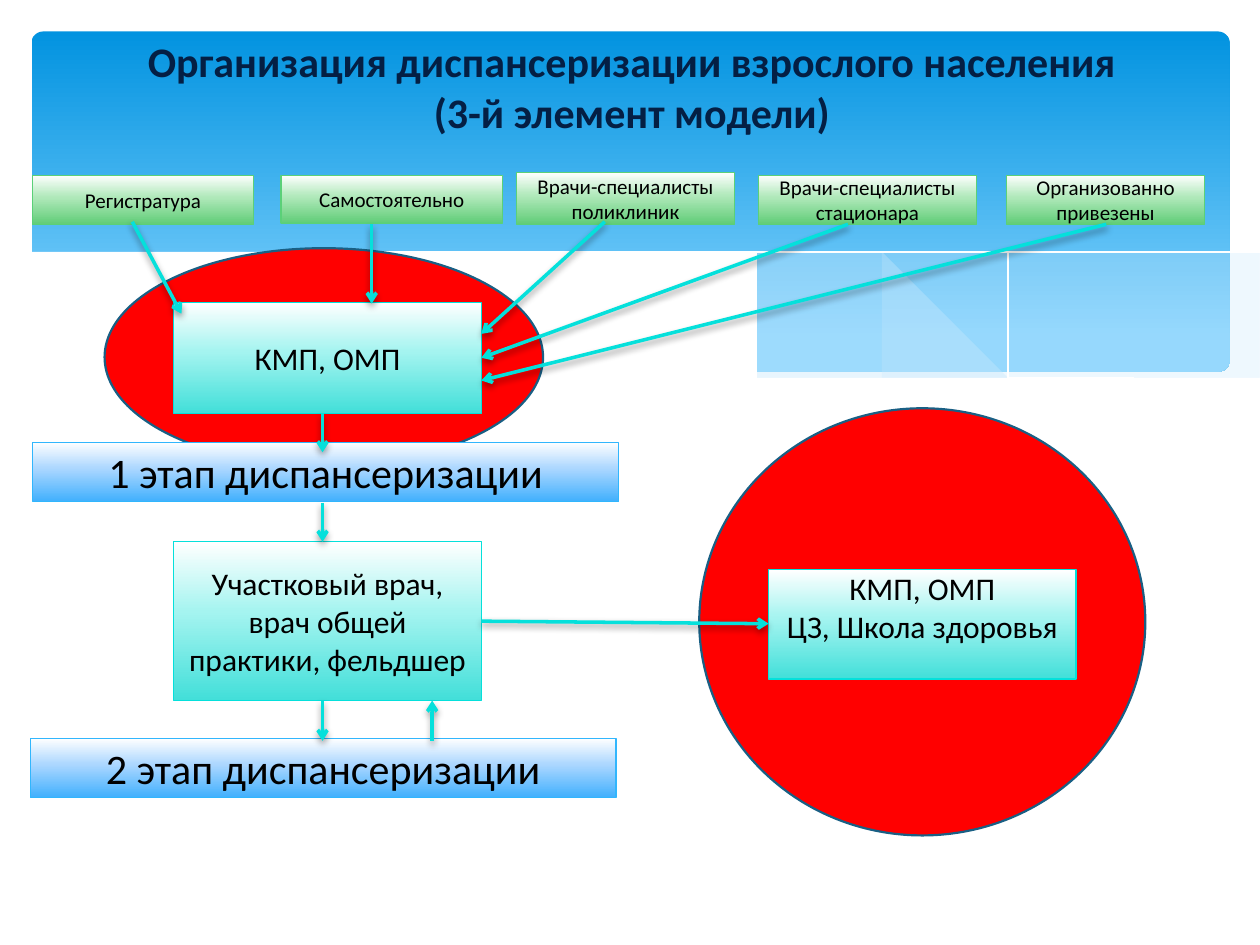
from collections import namedtuple

from lxml import etree
from pptx import Presentation
from pptx import util as u
from pptx.dml import color as dml
from pptx.enum import shapes, text
from pptx.oxml import ns

Box = namedtuple("Box", "left top width height")

COLORS = {
    "white": "FFFFFF", "black": "000000", "navy": "041F44", "red": "FF0000",
    "red_edge": "195F84", "sky_top": "0293E0", "sky_low": "83D3FE", "mist": "C6E7FC",
    "teal": "05E0DB", "teal_mid": "A5F4F0", "teal_low": "42DFD9",
    "green": "5BD078", "green_mid": "B1E9BB", "green_low": "61CD78",
    "blue": "31B6FD", "blue_mid": "ACD7FF", "blue_low": "42B0FD",
}
WAVES = [
    ([[(9.53, .16), (9.12, .23), (8.38, .39), (7.56, .58), (6.83, .73), (6.38, .81)],
      [(6.38, .81), (6.82, .87), (7.34, .92), (7.91, .94), (8.4, .91), (8.82, .85),
       (9.19, .75), (9.53, .63)]], "mist", 29),
    ([[(8.7, .89), (7.84, .76), (7.18, .63), (6.06, .38), (5.46, .24), (4.91, .14),
       (4.42, .07), (3.97, .03), (3.38, .01), (2.9, .04), (2.63, .07)],
      [(2.63, .07), (3.19, .15), (3.81, .27), (4.26, .38), (5.07, .56), (5.78, .71),
       (6.42, .82), (6.99, .9), (7.62, .94), (8.15, .94), (8.7, .89)]], "mist", 40),
    ([[(2.86, .11), (3.3, .05), (3.93, .03), (4.66, .06), (5.33, .13), (6.13, .24),
       (7.04, .42), (8.08, .67), (8.84, .88)]], None, None),
    ([[(5.9, .73), (6.72, .51), (7.53, .32), (8.43, .15), (9.01, .06), (9.52, .01)]],
     None, None),
    ([[(0, .29), (.23, .19), (.62, .09), (1.09, .02), (1.54, 0), (2.07, .01),
       (2.69, .06), (3.42, .18), (4.24, .36), (5.06, .55), (5.8, .7), (6.45, .81),
       (7.03, .88), (7.7, .92), (8.27, .91), (8.76, .85), (9.17, .75), (9.54, .62)],
      [(9.54, 1.45), (0, 1.45)]], "white", 100),
]
SOURCES = [
    (Box(1.97, .02, 1.76, .38), "Самостоятельно"),
    (Box(3.84, 0, 1.73, .41), "Врачи-специалисты поликлиник"),
    (Box(5.76, .02, 1.73, .39), "Врачи-специалисты стационара"),
    (Box(7.73, .02, 1.57, .39), "Организованно привезены"),
    (Box(0, .02, 1.75, .39), "Регистратура"),
]
ARROWS = [
    (8.78, 1.78, 3.82, 3.02), (6.73, 1.78, 3.82, 2.84), (4.8, 1.76, 3.82, 2.65),
    (2.95, 1.78, 2.95, 2.41), (1.05, 1.76, 1.44, 2.49), (2.56, 3.28, 2.56, 3.59),
    (2.56, 3.99, 2.56, 4.3), (2.56, 5.56, 2.56, 5.88), (3.43, 5.88, 3.43, 5.56),
    (3.82, 4.93, 6.1, 4.95),
]


def rgb(name):
    return dml.RGBColor.from_string(COLORS[name])


def add_xml(parent, tag, **values):
    return etree.SubElement(parent, ns.qn(tag), {key: str(v) for key, v in values.items()})


def inside(box, part):
    return Box(box.left + part.left, box.top + part.top, part.width, part.height)


def lengths(box):
    return [u.Inches(value) for value in box]


def set_gradient(shape, stops):
    shape.fill.gradient()
    shape.fill.gradient_angle = 270
    stop_list = next(shape._element.spPr.iter(ns.qn("a:gsLst")))
    for stop in list(stop_list):
        stop_list.remove(stop)
    for percent, name in stops:
        stop = add_xml(stop_list, "a:gs", pos=percent * 1000)
        add_xml(stop, "a:srgbClr", val=COLORS[name])


def write(frame, lines, size, color="black", bold=False, one_para=False):
    frame.word_wrap = True
    frame.vertical_anchor = text.MSO_ANCHOR.MIDDLE
    formats = {"name": "Calibri", "size": u.Pt(size), "bold": bold}
    para = frame.paragraphs[0]
    for index, line in enumerate(lines):
        if index and one_para:
            para.add_line_break()
        elif index:
            para = frame.add_paragraph()
        para.alignment = text.PP_ALIGN.CENTER
        span = para.add_run()
        span.text = line
        for key, value in formats.items():
            setattr(span.font, key, value)
        span.font.color.rgb = rgb(color)


def add_card(page, box, lines, size, tone):
    card = page.shapes.add_shape(shapes.MSO_SHAPE.RECTANGLE, *lengths(box))
    card.shadow.inherit = False
    set_gradient(card, [(0, "white"), (44, tone + "_mid"), (100, tone + "_low")])
    card.line.color.rgb = rgb(tone)
    card.line.width = u.Pt(0.75)
    write(card.text_frame, lines, size)
    return card


def add_disc(page, box):
    disc = page.shapes.add_shape(shapes.MSO_SHAPE.FLOWCHART_CONNECTOR, *lengths(box))
    disc.shadow.inherit = False
    disc.fill.solid()
    disc.fill.fore_color.rgb = rgb("red")
    disc.line.color.rgb = rgb("red_edge")
    disc.line.width = u.Pt(1.25)


def smooth(points, steps=5):
    if len(points) < 3:
        return points
    padded = [points[0], *points, points[-1]]
    curve = [points[0]]
    for a, b, c, d in zip(padded, padded[1:], padded[2:], padded[3:]):
        for step in range(1, steps + 1):
            t = step / steps
            curve.append(tuple(
                (2 * q + (r - p) * t + (2 * p - 5 * q + 4 * r - s) * t ** 2
                 + (3 * q - p - 3 * r + s) * t ** 3) / 2
                for p, q, r, s in zip(a, b, c, d)))
    return curve


def add_wave(page, box, sections, color, opacity):
    points = [(box.left + x, box.top + y) for part in sections for x, y in smooth(part)]
    builder = page.shapes.build_freeform(*points[0], scale=u.Inches(1))
    builder.add_line_segments(points[1:], close=color is not None)
    wave = builder.convert_to_shape()
    wave.shadow.inherit = False
    if color is None:
        wave.fill.background()
        wave.line.color.rgb = rgb("white")
        wave.line.width = u.Pt(0)
        return
    wave.line.fill.background()
    wave.fill.solid()
    wave.fill.fore_color.rgb = rgb(color)
    if opacity < 100:
        shade = next(wave._element.spPr.iter(ns.qn("a:srgbClr")))
        add_xml(shade, "a:alpha", val=opacity * 1000)


def draw_backdrop(page, box):
    sky = page.shapes.add_shape(shapes.MSO_SHAPE.ROUNDED_RECTANGLE, *lengths(box))
    sky.adjustments[0] = 0.034
    sky.shadow.inherit = False
    set_gradient(sky, [(0, "sky_top"), (90, "sky_low")])
    sky.line.fill.background()
    waves = inside(box, Box(-.02, 1.59, 9.54, 1.45))
    for sections, color, opacity in WAVES:
        add_wave(page, waves, sections, color, opacity)


def draw_title(page, box):
    title = page.shapes.add_textbox(*lengths(box))
    write(title.text_frame, ["Организация диспансеризации взрослого населения",
                             "(3-й элемент модели)"], 24, "navy", True, True)


def draw_sources(page, box):
    for part, label in SOURCES:
        add_card(page, inside(box, part), [label], 12, "green")


def draw_stages(page, box):
    add_disc(page, inside(box, Box(.59, 0, 3.48, 1.73)))
    for part, label, size, tone in [
        (Box(1.14, .43, 2.44, .88), "КМП, ОМП", 18, "teal"),
        (Box(.02, 1.54, 4.65, .47), "1 этап диспансеризации", 24, "blue"),
        (Box(1.14, 2.33, 2.44, 1.26), "Участковый врач, врач общей практики, фельдшер",
         18, "teal"),
        (Box(0, 3.89, 4.65, .47), "2 этап диспансеризации", 24, "blue"),
    ]:
        add_card(page, inside(box, part), [label], size, tone)


def draw_school(page, box):
    add_disc(page, box)
    card = add_card(page, inside(box, Box(.55, 1.28, 2.44, .87)),
                    ["КМП, ОМП", "ЦЗ, Школа здоровья"], 18, "teal")
    card.text_frame.margin_top = 0
    card.text_frame.margin_bottom = u.Inches(0.27)


def draw_arrows(page, box):
    for x1, y1, x2, y2 in ARROWS:
        ends = (box.left + x1, box.top + y1, box.left + x2, box.top + y2)
        arrow = page.shapes.add_connector(shapes.MSO_CONNECTOR.STRAIGHT, *lengths(ends))
        arrow.line.color.rgb = rgb("teal")
        arrow.line.width = u.Pt(2)
        add_xml(arrow.line._get_or_add_ln(), "a:tailEnd", type="arrow")
        effects = add_xml(arrow._element.spPr, "a:effectLst")
        shadow = add_xml(effects, "a:outerShdw", blurRad=u.Pt(4), dist=u.Pt(2),
                         dir=5400000, rotWithShape=0)
        shade = add_xml(shadow, "a:srgbClr", val=COLORS["black"])
        add_xml(shade, "a:alpha", val=38000)


def main():
    deck = Presentation()
    deck.slide_width, deck.slide_height = u.Inches(10), u.Inches(7.5)
    page = deck.slides.add_slide(deck.slide_layouts[6])
    draw_backdrop(page, Box(.25, .25, 9.51, 2.7))
    draw_title(page, Box(.26, .3, 9.51, .77))
    draw_stages(page, Box(.24, 1.97, 4.67, 4.36))
    draw_school(page, Box(5.55, 3.24, 3.54, 3.39))
    draw_sources(page, Box(.26, 1.37, 9.3, .41))
    draw_arrows(page, Box(0, 0, 10, 7.5))
    deck.save("out.pptx")


if __name__ == "__main__":
    main()
